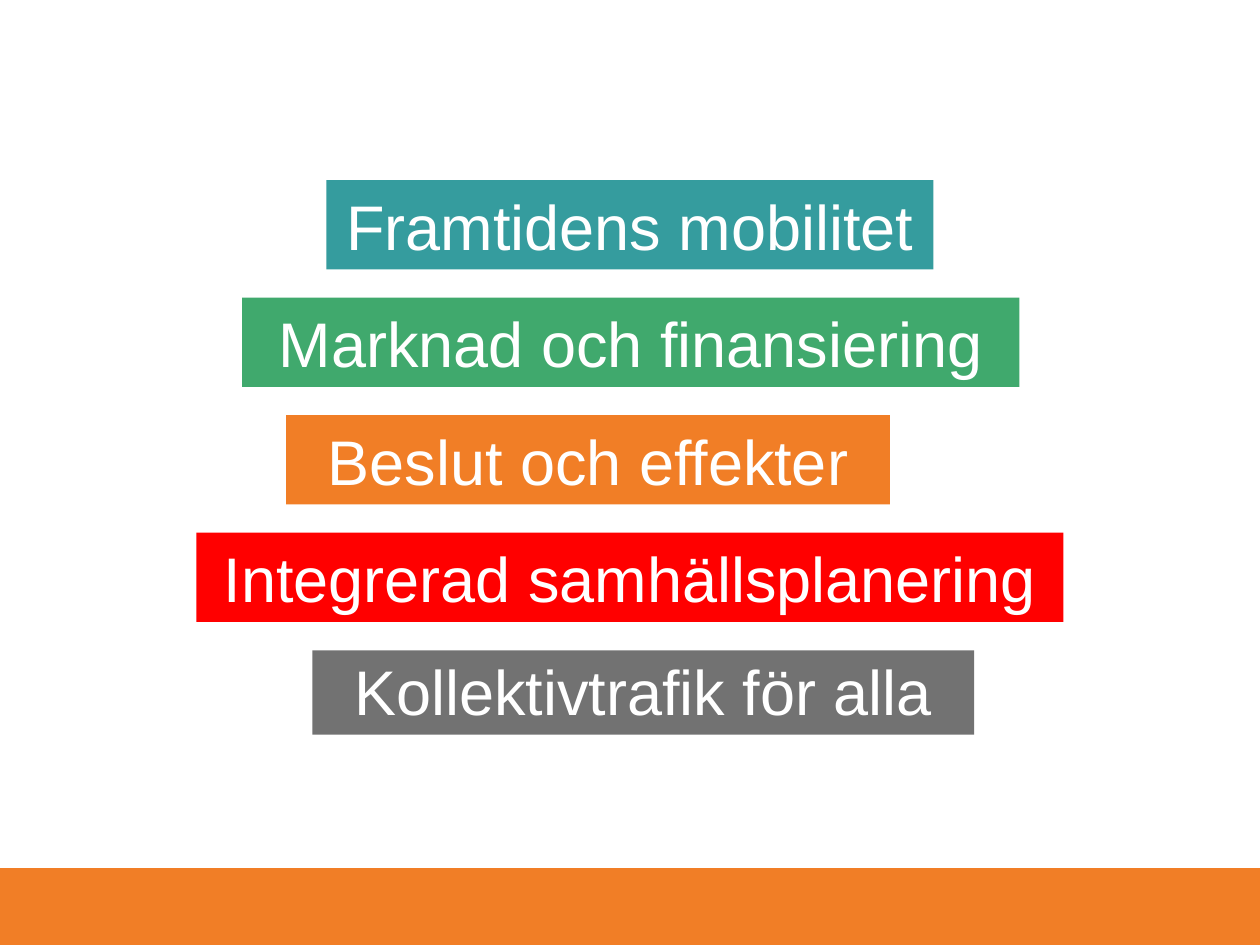
from dataclasses import dataclass

import pptx
import pptx.dml.color
import pptx.enum.shapes
import pptx.enum.text
import pptx.util
from pptx.util import Cm

COLORS = {
    "teal": "359C9E",
    "green": "40A96D",
    "orange": "F17E26",
    "red": "FF0000",
    "gray": "727272",
    "white": "FFFFFF",
}
SLIDE_W, SLIDE_H = 25.4, 19.05
FOOTER_H = 1.55
FIRST_TOP, PITCH = 3.63, 2.37


@dataclass
class Theme:
    """A labelled bar; lengths are in centimetres."""
    text: str
    color: str
    left: float
    width: float
    height: float = 1.8
    line_spacing: float = 0.8


THEMES = [
    Theme("Framtidens mobilitet", "teal", 6.58, 12.24),
    Theme("Marknad och finansiering", "green", 4.88, 15.67),
    Theme("Beslut och effekter", "orange", 5.77, 12.17),
    Theme("Integrerad samhällsplanering", "red", 3.96, 17.48),
    Theme("Kollektivtrafik för alla", "gray", 6.3, 13.34, 1.7, 0.7),
]


def rgb(name: str) -> pptx.dml.color.RGBColor:
    return pptx.dml.color.RGBColor.from_string(COLORS[name])


def add_bar(slide, left: float, top: float, width: float, height: float, color: str):
    sp = slide.shapes.add_shape(
        pptx.enum.shapes.MSO_SHAPE.RECTANGLE, Cm(left), Cm(top), Cm(width), Cm(height)
    )
    sp.shadow.inherit = False
    sp.fill.solid()
    sp.fill.fore_color.rgb = rgb(color)
    sp.line.fill.background()
    return sp


def set_text(sp, text: str, *, size: float = 36, font: str = "Arial",
             color: str = "white", line_spacing: float = 0.8) -> None:
    tf = sp.text_frame
    tf.word_wrap = True
    tf.vertical_anchor = pptx.enum.text.MSO_ANCHOR.MIDDLE
    tf.margin_left = tf.margin_right = Cm(0.3)
    tf.margin_top, tf.margin_bottom = Cm(0.4), Cm(0.1)
    p = tf.paragraphs[0]
    p.alignment = pptx.enum.text.PP_ALIGN.CENTER
    p.line_spacing = line_spacing
    r = p.add_run()
    r.text = text
    r.font.name = font
    r.font.size = pptx.util.Pt(size)
    r.font.color.rgb = rgb(color)


def main() -> None:
    prs = pptx.Presentation()
    prs.slide_width, prs.slide_height = Cm(SLIDE_W), Cm(SLIDE_H)
    s = prs.slides.add_slide(prs.slide_layouts[6])
    add_bar(s, 0, SLIDE_H - FOOTER_H, SLIDE_W, FOOTER_H, "orange")
    for i, theme in enumerate(THEMES):
        sp = add_bar(s, theme.left, FIRST_TOP + i * PITCH, theme.width, theme.height, theme.color)
        set_text(sp, theme.text, line_spacing=theme.line_spacing)
    prs.save("out.pptx")


if __name__ == "__main__":
    main()
